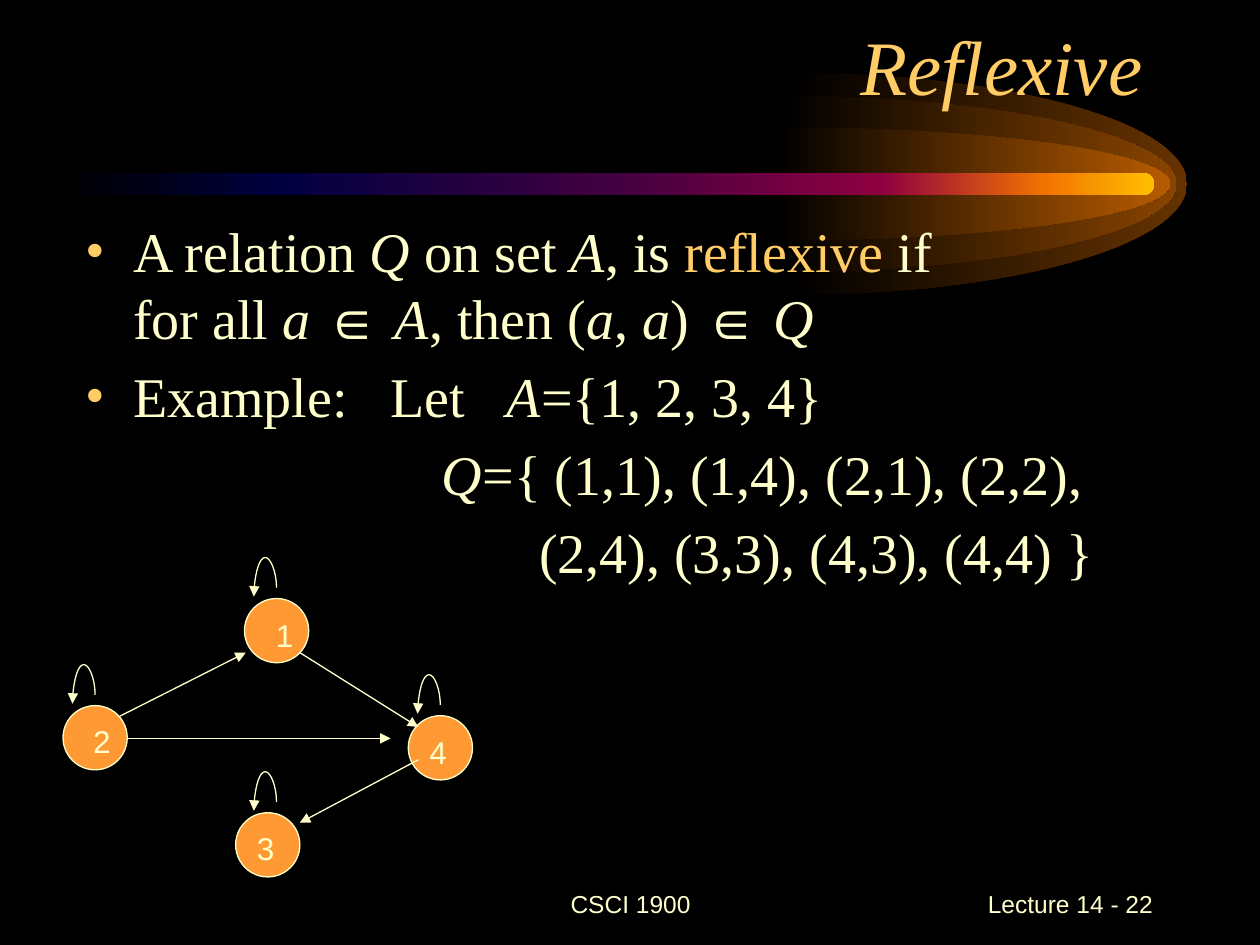
from dataclasses import dataclass

from lxml import etree
from pptx import Presentation
from pptx.dml.color import RGBColor
from pptx.enum.shapes import MSO_CONNECTOR, MSO_SHAPE
from pptx.enum.text import MSO_ANCHOR, MSO_AUTO_SIZE, PP_ALIGN
from pptx.oxml.ns import qn
from pptx.util import Inches, Pt

STRAIGHT, CURVE = MSO_CONNECTOR.STRAIGHT, MSO_CONNECTOR.CURVE
ELLIPSE, ROUNDED = MSO_SHAPE.OVAL, MSO_SHAPE.ROUNDED_RECTANGLE
LEFT, CENTER, RIGHT = PP_ALIGN.LEFT, PP_ALIGN.CENTER, PP_ALIGN.RIGHT
TOP, MIDDLE, BOTTOM = MSO_ANCHOR.TOP, MSO_ANCHOR.MIDDLE, MSO_ANCHOR.BOTTOM
SERIF, SANS = "Times New Roman", "Arial"
COLORS = {"background": "000000", "text": "FFFFCC", "accent": "FFCC66", "node": "FF9933"}
NODE_SIZE = 0.51
HALO_WIDTH, HALO_MIDDLE = 3.13, 1.46
ARC = 0.55  # control point distance of a quarter ellipse, relative to its radius


@dataclass
class Halo:
    left: float
    radius: float
    color: str


@dataclass
class Node:
    label: str
    left: float
    top: float
    label_left: float
    label_top: float
    loop_left: float


@dataclass
class Edge:
    start: tuple[float, float]
    end: tuple[float, float]


@dataclass
class Piece:
    text: str
    italic: bool = False
    color: str = "text"
    spacing: int = 0  # extra character spacing in points


@dataclass
class Line:
    rows: list[list[Piece]]
    margin: float
    bullet: bool = False


HALOS = [Halo(6.29, 0.88, "663300"), Halo(6.21, 0.7, "894400"), Halo(6.16, 0.45, "B75B00")]
BAR_STOPS = [(0, "000000"), (20, "000040"), (50, "400040"),
             (75, "8F0040"), (90, "F27300"), (100, "FFBF00")]
NODES = [
    Node("1", 1.94, 4.75, 2.09, 4.84, 2.07),
    Node("2", 0.5, 5.6, 0.64, 5.68, 0.63),
    Node("3", 1.87, 6.45, 1.94, 6.53, 2.07),
    Node("4", 3.24, 5.68, 3.31, 5.77, 3.37),
]
EDGES = [
    Edge((0.94, 5.69), (1.95, 5.18)),
    Edge((2.38, 5.18), (3.32, 5.77)),
    Edge((3.32, 6.03), (2.38, 6.53)),
    Edge((1.01, 5.86), (3.1, 5.86)),
]
WIDE_GAP = Piece(" ", spacing=16)
BODY = [
    Line([
        [Piece("A relation "), Piece("Q", True), Piece(" on set "), Piece("A", True),
         Piece(", is "), Piece("reflexive", color="accent"), Piece(" if ")],
        [Piece("for all "), Piece("a ", True), Piece("∈ "), Piece("A", True),
         Piece(", then ("), Piece("a", True), Piece(", "), Piece("a", True),
         Piece(") ∈ "), Piece("Q", True)],
    ], 0.38, True),
    Line([[Piece("Example:"), WIDE_GAP, Piece("Let"), WIDE_GAP, Piece("A", True),
           Piece("={1, 2, 3, 4}")]], 0.38, True),
    Line([[Piece("Q", True), Piece("={ (1,1), (1,4), (2,1), (2,2),")]], 2.83),
    Line([[Piece("(2,4), (3,3), (4,3), (4,4) }")]], 3.6),
]


def rgb(name: str) -> RGBColor:
    return RGBColor.from_string(COLORS[name])


def set_gradient(shape, stops: list[tuple[int, str]]) -> None:
    shape.shadow.inherit = False
    shape.line.fill.background()
    shape.fill.gradient()
    shape.fill.gradient_angle = 0
    stop_list = shape._element.spPr.find(".//" + qn("a:gsLst"))
    for stop in list(stop_list):
        stop_list.remove(stop)
    for percent, color in stops:
        stop = etree.SubElement(stop_list, qn("a:gs"), pos=str(percent * 1000))
        etree.SubElement(stop, qn("a:srgbClr"), val=color)


def add_halo(slide, halo: Halo) -> None:
    """Right half of an ellipse around the tip of the bar, as two quarter arcs."""
    left, top = Inches(halo.left), Inches(HALO_MIDDLE - halo.radius)
    width, radius = Inches(HALO_WIDTH), Inches(halo.radius)
    builder = slide.shapes.build_freeform(left, top)
    builder.add_line_segments([(left + width, top + radius), (left, top + 2 * radius)], close=True)
    shape = builder.convert_to_shape()
    across, down = int(ARC * width), int(ARC * radius)
    arcs = [
        [(across, 0), (width, radius - down), (width, radius)],
        [(width, radius + down), (across, 2 * radius), (0, 2 * radius)],
    ]
    for segment, points in zip(shape._element.findall(".//" + qn("a:lnTo")), arcs):
        curve = etree.Element(qn("a:cubicBezTo"))
        for x, y in points:
            etree.SubElement(curve, qn("a:pt"), x=str(x), y=str(y))
        segment.getparent().replace(segment, curve)
    set_gradient(shape, [(0, COLORS["background"]), (100, halo.color)])


def format_text(shape, size: int, font: str, color: str, alignment, anchor) -> None:
    frame = shape.text_frame
    frame.word_wrap = True
    frame.auto_size = MSO_AUTO_SIZE.NONE
    frame.vertical_anchor = anchor
    for paragraph in frame.paragraphs:
        paragraph.alignment = alignment
        for run in paragraph.runs:
            run.font.size = Pt(size)
            run.font.name = font
            run.font.color.rgb = rgb(color)


def add_text(slide, text: str, box: tuple[float, ...], size: int, alignment, anchor) -> None:
    shape = slide.shapes.add_textbox(*map(Inches, box))
    shape.text_frame.text = text
    format_text(shape, size, SANS, "text", alignment, anchor)


def add_piece(paragraph, piece: Piece) -> None:
    run = paragraph.add_run()
    run.text = piece.text
    run.font.size = Pt(32)
    run.font.name = SERIF
    run.font.italic = piece.italic
    run.font.color.rgb = rgb(piece.color)
    if piece.spacing:
        run.font._element.set("spc", str(piece.spacing * 100))


def fill_line(paragraph, line: Line) -> None:
    paragraph.space_before = Pt(6)
    properties = paragraph._p.get_or_add_pPr()
    properties.set("marL", str(Inches(line.margin)))
    if line.bullet:
        properties.set("indent", str(-Inches(line.margin)))
        bullet_color = etree.SubElement(properties, qn("a:buClr"))
        etree.SubElement(bullet_color, qn("a:srgbClr"), val=COLORS["accent"])
        etree.SubElement(properties, qn("a:buFont"), typeface=SERIF)
        etree.SubElement(properties, qn("a:buChar"), char="•")
    for index, row in enumerate(line.rows):
        if index:
            paragraph.add_line_break()
        for piece in row:
            add_piece(paragraph, piece)


def add_arrow(slide, kind, edge: Edge):
    connector = slide.shapes.add_connector(kind, *map(Inches, edge.start + edge.end))
    connector.line.color.rgb = rgb("text")
    connector.line.width = Pt(0.75)
    etree.SubElement(connector.line._get_or_add_ln(), qn("a:tailEnd"), type="triangle")
    etree.SubElement(connector._element.spPr, qn("a:effectLst"))
    return connector


def add_loop(slide, node: Node) -> None:
    left, top = node.loop_left, node.top - 0.14
    loop = add_arrow(slide, CURVE, Edge((left + 0.07, top + 0.18), (left, top)))
    properties = loop._element.spPr
    properties.find(qn("a:xfrm")).set("rot", str(270 * 60000))
    geometry = properties.find(qn("a:prstGeom"))
    adjustments = geometry.find(qn("a:avLst"))
    if adjustments is None:
        adjustments = etree.SubElement(geometry, qn("a:avLst"))
    etree.SubElement(adjustments, qn("a:gd"), name="adj1", fmla="val -342900")


def add_node(slide, node: Node) -> None:
    circle = slide.shapes.add_shape(
        ELLIPSE, *map(Inches, (node.left, node.top, NODE_SIZE, NODE_SIZE)))
    circle.shadow.inherit = False
    circle.fill.solid()
    circle.fill.fore_color.rgb = rgb("node")
    circle.line.color.rgb = rgb("text")
    circle.line.width = Pt(0.75)
    add_text(slide, node.label, (node.label_left, node.label_top, 0.29, 0.4), 18, LEFT, TOP)


def main() -> None:
    presentation = Presentation()
    presentation.slide_width, presentation.slide_height = Inches(10), Inches(7.5)
    slide = presentation.slides.add_slide(presentation.slide_layouts[5])
    slide.background.fill.solid()
    slide.background.fill.fore_color.rgb = rgb("background")

    # Comet decoration
    for halo in HALOS:
        add_halo(slide, halo)
    bar = slide.shapes.add_shape(ROUNDED, *map(Inches, (0.5, 1.37, 8.66, 0.18)))
    bar.adjustments[0] = 0.5
    set_gradient(bar, BAR_STOPS)

    # Title, brought in front of the decoration
    title = slide.shapes.title
    title.left, title.top, title.width, title.height = map(Inches, (0.67, 0.25, 8.5, 0.68))
    title.text_frame.text = "Reflexive"
    format_text(title, 44, SERIF, "accent", RIGHT, BOTTOM)
    title.text_frame.paragraphs[0].runs[0].font.italic = True
    slide.shapes._spTree.append(title._element)

    # Body
    body = slide.shapes.add_textbox(*map(Inches, (0.58, 1.67, 9, 4.95)))
    frame = body.text_frame
    frame.word_wrap = True
    for index, line in enumerate(BODY):
        fill_line(frame.add_paragraph() if index else frame.paragraphs[0], line)

    # Directed graph
    for node in NODES:
        add_node(slide, node)
        add_loop(slide, node)
    for edge in EDGES:
        add_arrow(slide, STRAIGHT, edge)

    # Footer
    add_text(slide, "CSCI 1900", (3.42, 6.92, 3.17, 0.5), 14, CENTER, MIDDLE)
    add_text(slide, "Lecture 14 - 22", (7.17, 6.92, 2.08, 0.5), 14, RIGHT, MIDDLE)

    presentation.save("out.pptx")


if __name__ == "__main__":
    main()
